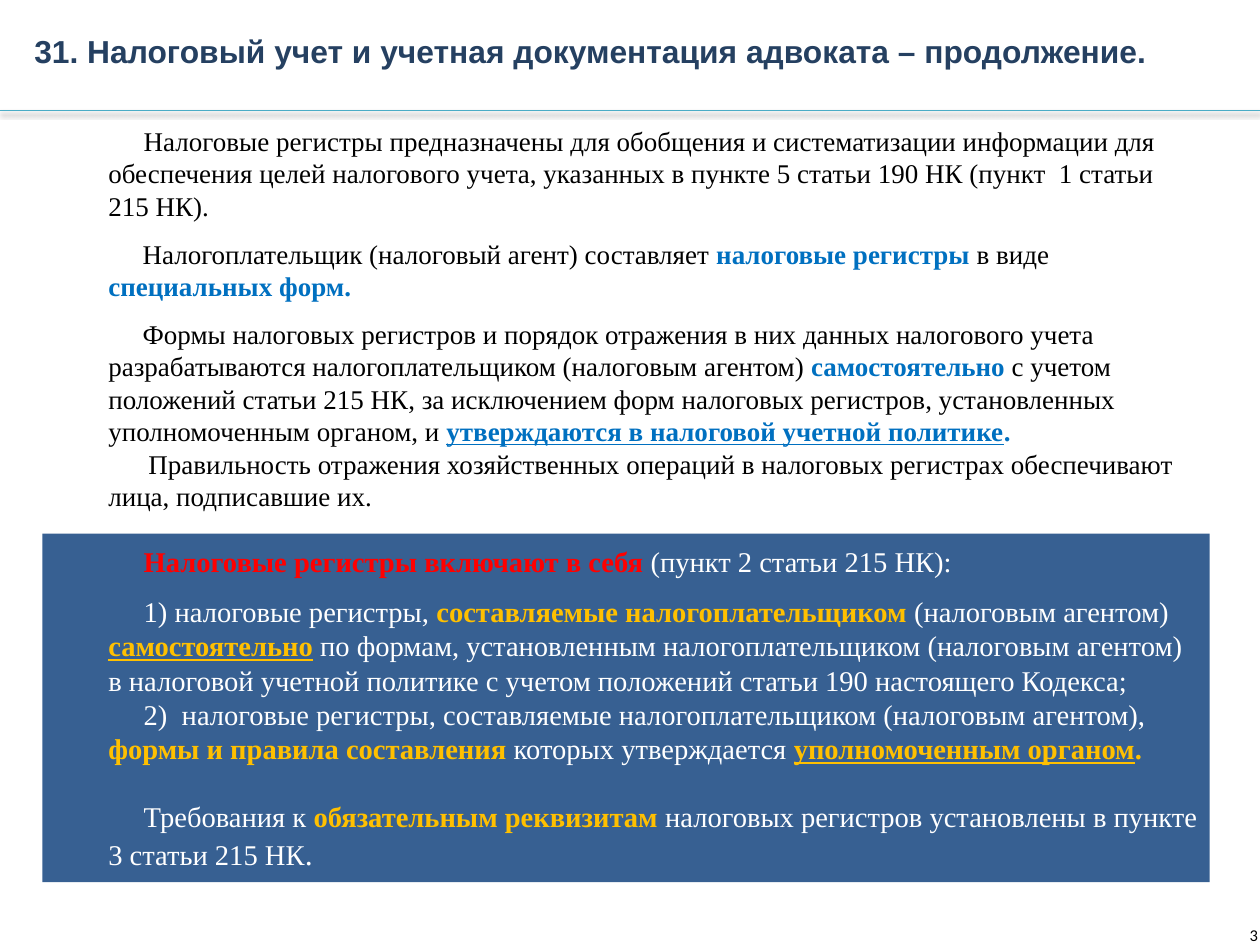
import pptx
import pptx.util
import pptx.dml.color
import pptx.enum.shapes
import pptx.enum.text
import pptx.oxml
import pptx.oxml.ns

Inches, Pt = pptx.util.Inches, pptx.util.Pt
ANCHOR = pptx.enum.text.MSO_ANCHOR
ALIGN = pptx.enum.text.PP_ALIGN
AUTO_SIZE = pptx.enum.text.MSO_AUTO_SIZE

WIDTH, HEIGHT = 11.03, 8.27
TEXT_LEFT, TEXT_WIDTH = 0.37, 10.22
BLACK, WHITE, NAVY, PANEL = "000000", "FFFFFF", "254061", "376092"
BLUE, GOLD, RED, TEAL = "0070C0", "FFC000", "FF0000", "4BACC6"

SHADOW = (
    '<a:effectLst xmlns:a="http://schemas.openxmlformats.org/drawingml/2006/main">'
    '<a:outerShdw blurRad="40000" dist="23000" dir="5400000" rotWithShape="0">'
    '<a:srgbClr val="000000"><a:alpha val="35000"/></a:srgbClr>'
    '</a:outerShdw></a:effectLst>'
)

# Each paragraph: first-line indent (in), space before (pt), runs.
# Each run: text, then optional colour (which makes it bold), underline, size.
REGISTERS = [
    (0.31, 0, [("Налоговые регистры предназначены для обобщения и систематизации информации "
                "для обеспечения целей налогового учета, указанных в пункте 5 статьи 190 НК "
                "(пункт  1 статьи 215 НК).",)]),
    (0.3, 9.8, [("Налогоплательщик (налоговый агент) составляет ",),
                ("налоговые регистры ", BLUE),
                ("в виде ",),
                ("специальных форм.", BLUE)]),
    (0.3, 9.8, [("Формы налоговых регистров и порядок отражения в них данных налогового учета "
                 "разрабатываются налогоплательщиком (налоговым агентом) ",),
                ("самостоятельно", BLUE),
                (" с учетом положений статьи 215 НК, за исключением форм налоговых регистров, "
                 "установленных уполномоченным органом, и ",),
                ("утверждаются в налоговой учетной политике", BLUE, True),
                (".", BLUE)]),
    (0.35, 0, [("Правильность отражения хозяйственных операций в налоговых регистрах "
                "обеспечивают лица, подписавшие их.",)]),
]
CONTENTS = [
    (0.31, 0, [("Налоговые регистры включают в себя ", RED),
               ("(пункт 2 статьи 215 НК):",)]),
    (0.31, 9.8, [("1) налоговые регистры, ",),
                 ("составляемые налогоплательщиком ", GOLD),
                 ("(налоговым агентом) ",),
                 ("самостоятельно", GOLD, True),
                 (" по формам, установленным налогоплательщиком (налоговым агентом) в налоговой "
                  "учетной политике с учетом положений статьи 190 настоящего Кодекса;",)]),
    (0.31, 0, [("2)  налоговые регистры, составляемые налогоплательщиком (налоговым агентом), ",),
               ("формы и правила составления", GOLD),
               (" которых утверждается ",),
               ("уполномоченным органом", GOLD, True),
               (".", GOLD)]),
    (0.31, 21.5, [("Требования к ",),
                  ("обязательным реквизитам ", GOLD),
                  ("налоговых регистров установлены в пункте 3 статьи 215 НК",),
                  (".", None, False, 20)]),
]


def colour(value):
    return pptx.dml.color.RGBColor.from_string(value)


class SlideBuilder:
    heading_font = "Arial"
    text_font = "Times New Roman"
    number_font = "Calibri"
    hanging = 0.48

    def __init__(self, presentation):
        self.slide = presentation.slides.add_slide(presentation.slide_layouts[5])

    def style(self, run, font, size, tint, bold=False, underline=False):
        run.font.name = font
        run.font.size = Pt(size)
        run.font.color.rgb = colour(tint)
        run.font.bold = bold
        run.font.underline = underline

    def title(self, text, left, top, width, height):
        heading = self.slide.shapes.title
        heading.left, heading.top = Inches(left), Inches(top)
        heading.width, heading.height = Inches(width), Inches(height)
        frame = heading.text_frame
        frame.text = text
        frame.word_wrap = True
        frame.auto_size = AUTO_SIZE.NONE
        frame.vertical_anchor = ANCHOR.BOTTOM
        line = frame.paragraphs[0]
        line.alignment = ALIGN.LEFT
        line.line_spacing = 0.9
        self.style(line.runs[0], self.heading_font, 20, NAVY, bold=True)

    def rule(self, y):
        divider = self.slide.shapes.add_connector(
            pptx.enum.shapes.MSO_CONNECTOR.STRAIGHT,
            Inches(0), Inches(y), Inches(WIDTH), Inches(y))
        divider.line.color.rgb = colour(TEAL)
        divider.line.width = Pt(0.5)
        properties = divider.element.find(pptx.oxml.ns.qn("p:spPr"))
        properties.append(pptx.oxml.parse_xml(SHADOW))

    def text_box(self, left, top, width, height):
        box = self.slide.shapes.add_textbox(
            Inches(left), Inches(top), Inches(width), Inches(height))
        box.text_frame.word_wrap = True
        box.text_frame.auto_size = AUTO_SIZE.SHAPE_TO_FIT_TEXT
        return box.text_frame

    def panel(self, left, top, width, height):
        block = self.slide.shapes.add_shape(
            pptx.enum.shapes.MSO_SHAPE.RECTANGLE,
            Inches(left), Inches(top), Inches(width), Inches(height))
        block.shadow.inherit = False
        block.fill.solid()
        block.fill.fore_color.rgb = colour(PANEL)
        block.line.fill.background()
        block.text_frame.word_wrap = True
        block.text_frame.vertical_anchor = ANCHOR.MIDDLE
        return block.text_frame

    def paragraphs(self, frame, content, size, base):
        for index, (indent, before, pieces) in enumerate(content):
            paragraph = frame.add_paragraph() if index else frame.paragraphs[0]
            paragraph.alignment = ALIGN.LEFT
            paragraph.space_before = Pt(before)
            self.indent(paragraph, self.hanging, indent)
            for piece in pieces:
                self.piece(paragraph, size, base, *piece)

    def piece(self, paragraph, size, base, text, accent=None, underline=False, own_size=None):
        run = paragraph.add_run()
        run.text = text
        self.style(run, self.text_font, own_size or size, accent or base,
                   bold=accent is not None, underline=underline)

    def indent(self, paragraph, left, first):
        properties = paragraph._p.get_or_add_pPr()
        properties.set("marL", str(Inches(left)))
        properties.set("indent", str(Inches(first)))

    def page_number(self, text, left, top, width, height):
        frame = self.text_box(left, top, width, height)
        frame.margin_left = frame.margin_right = 0
        frame.margin_top = frame.margin_bottom = 0
        frame.text = text
        line = frame.paragraphs[0]
        line.line_spacing = Pt(10.8)
        self.indent(line, 0.12, 0)
        self.style(line.runs[0], self.number_font, 10.4, BLACK)


def main():
    presentation = pptx.Presentation()
    presentation.slide_width = Inches(WIDTH)
    presentation.slide_height = Inches(HEIGHT)
    builder = SlideBuilder(presentation)

    # Contents of the registers
    contents = builder.panel(TEXT_LEFT, 4.67, TEXT_WIDTH, 3.05)
    builder.paragraphs(contents, CONTENTS, 18, WHITE)

    # Page number, heading and divider
    builder.page_number("31", 10.82, 8.12, 0.21, 0.15)
    builder.rule(0.97)
    builder.title("31. Налоговый учет и учетная документация адвоката – продолжение.",
                  0.2, 0, 10.06, 0.67)

    # Purpose and form of the registers
    registers = builder.text_box(TEXT_LEFT, 1.04, TEXT_WIDTH, 3.69)
    builder.paragraphs(registers, REGISTERS, 17, BLACK)

    presentation.save("out.pptx")


if __name__ == "__main__":
    main()
